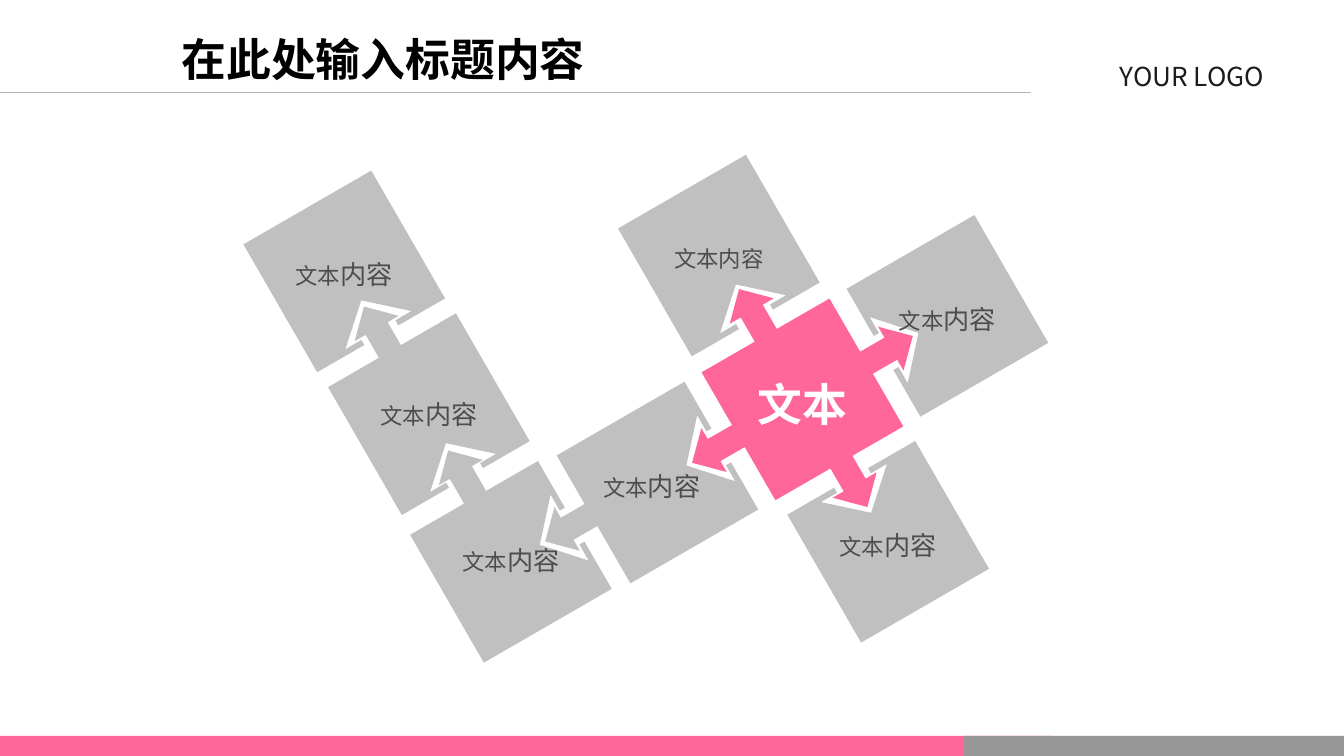
from math import cos, radians, sin

from lxml.etree import SubElement
from pptx import Presentation
from pptx.dml.color import RGBColor
from pptx.enum.shapes import MSO_CONNECTOR as Link, MSO_SHAPE as Kind
from pptx.enum.text import MSO_ANCHOR as Anchor, MSO_AUTO_SIZE as Fit, PP_ALIGN as Align
from pptx.oxml.ns import qn
from pptx.util import Cm, Pt

PINK = RGBColor(0xFF, 0x66, 0x99)
SILVER = RGBColor(0xC0, 0xC0, 0xC0)
GREY = RGBColor(0x96, 0x96, 0x96)
RULE = RGBColor(0xB2, 0xB2, 0xB2)
INK = RGBColor(0x4D, 0x4D, 0x4D)
DARK = RGBColor(0x1C, 0x1C, 0x1C)
BLACK = RGBColor(0, 0, 0)
WHITE = RGBColor(0xFF, 0xFF, 0xFF)

SANS = "Noto Sans CJK SC"
SERIF = "Times New Roman"
SIDE = 2.79
TILT = radians(30)
TOP, RIGHT, BOTTOM, LEFT = range(4)
NOTCH = [(-0.37, 0), (-0.37, -0.11), (-0.72, -0.11), (0, -0.76),
         (0.72, -0.11), (0.37, -0.11), (0.37, 0)]


def notch(mid=1.39):
    return [(mid + along, out) for along, out in NOTCH]


def arrow(mid=1.4, stem=0.53):
    half = [(-0.24, 0), (-0.24, stem), (-0.48, stem)]
    tip = [(0, stem + 0.48)]
    back = [(-along, out) for along, out in reversed(half)]
    return [(mid + along, out) for along, out in half + tip + back]


def outline(left, top, cuts):
    points = []
    x, y = left, top
    for side in (TOP, RIGHT, BOTTOM, LEFT):
        turn = side * radians(90) - TILT
        dx, dy = cos(turn), sin(turn)
        for along, out in [(0, 0)] + cuts.get(side, []):
            points.append((Cm(x + along * dx + out * dy),
                           Cm(y + along * dy - out * dx)))
        x, y = x + SIDE * dx, y + SIDE * dy
    return points


def style(para, color, size=None, face=SANS, bold=False):
    para.alignment = Align.CENTER
    font = para.font
    font.name = face
    font.color.rgb = color
    font.bold = bold
    if size:
        font.size = Pt(size)
    east = SubElement(font._element, qn("a:ea"))
    east.set("typeface", SANS)


def paint(shape, color):
    shape.shadow.inherit = False
    shape.fill.solid()
    shape.fill.fore_color.rgb = color
    shape.line.fill.background()


def add_tile(slide, left, top, cuts, color=SILVER):
    points = outline(left, top, cuts)
    form = slide.shapes.build_freeform(*points[0], scale=1.0)
    form.add_line_segments(points[1:], close=True)
    tile = form.convert_to_shape()
    paint(tile, color)
    frame = tile.text_frame
    frame.word_wrap = True
    frame.vertical_anchor = Anchor.MIDDLE
    para = frame.paragraphs[0]
    para.line_spacing = 1.2
    return para


def add_label(para, parts):
    for text, size in parts:
        run = para.add_run()
        run.text = text
        run.font.size = Pt(size)
    style(para, INK)


def add_bar(slide, left, width, color):
    bar = slide.shapes.add_shape(Kind.RECTANGLE, Cm(left), Cm(13.91), Cm(width), Cm(0.38))
    paint(bar, color)


def add_rule(slide):
    rule = slide.shapes.add_connector(Link.STRAIGHT, 0, Cm(1.75), Cm(19.48), Cm(1.75))
    rule.line.color.rgb = RULE
    rule.line.width = Pt(0.75)
    SubElement(rule._element.spPr, qn("a:effectLst"))


def add_logo(slide):
    box = slide.shapes.add_textbox(Cm(19.89), Cm(1.02), Cm(5.28), Cm(0.85))
    box.text_frame.word_wrap = True
    para = box.text_frame.paragraphs[0]
    para.text = "YOUR LOGO"
    style(para, DARK, 14)


def set_title(slide):
    title = slide.shapes.title
    title.left, title.top = Cm(2.34), Cm(0.48)
    title.width, title.height = Cm(9.8), Cm(1.27)
    frame = title.text_frame
    frame.auto_size = Fit.NONE
    frame.vertical_anchor = Anchor.TOP
    para = frame.paragraphs[0]
    para.text = "在此处输入标题内容"
    style(para, BLACK, 24, SERIF, True)


def main():
    deck = Presentation()
    deck.slide_width, deck.slide_height = Cm(25.4), Cm(14.29)
    slide = deck.slides.add_slide(deck.slide_layouts[5])
    add_rule(slide)
    add_logo(slide)
    add_bar(slide, 0, 19.89, PINK)
    add_bar(slide, 18.21, 7.19, GREY)
    set_title(slide)

    mixed = [("文本", 12), ("内容", 14)]
    plain = [("文本内容", 12)]
    tiles = [
        (4.6, 4.62, {BOTTOM: notch()}, mixed),
        (6.2, 7.32, {TOP: arrow(1.35, 0.5), BOTTOM: notch()}, mixed),
        (7.75, 10.11, {TOP: arrow(1.42, 0.54), RIGHT: notch()}, mixed),
        (10.52, 8.61, {RIGHT: notch(), LEFT: arrow(1.49, 0.52)}, mixed),
        (14.88, 9.73, {TOP: notch()}, mixed),
        (16, 5.46, {LEFT: notch()}, mixed),
        (11.68, 4.32, {BOTTOM: notch()}, plain),
    ]
    for left, top, cuts, parts in tiles:
        add_label(add_tile(slide, left, top, cuts), parts)

    spokes = {TOP: arrow(), RIGHT: arrow(), BOTTOM: arrow(1.35, 0.5), LEFT: arrow()}
    hub = add_tile(slide, 13.26, 7.04, spokes, PINK)
    hub.text = "文本"
    style(hub, WHITE, 24, bold=True)
    deck.save("out.pptx")


if __name__ == "__main__":
    main()
